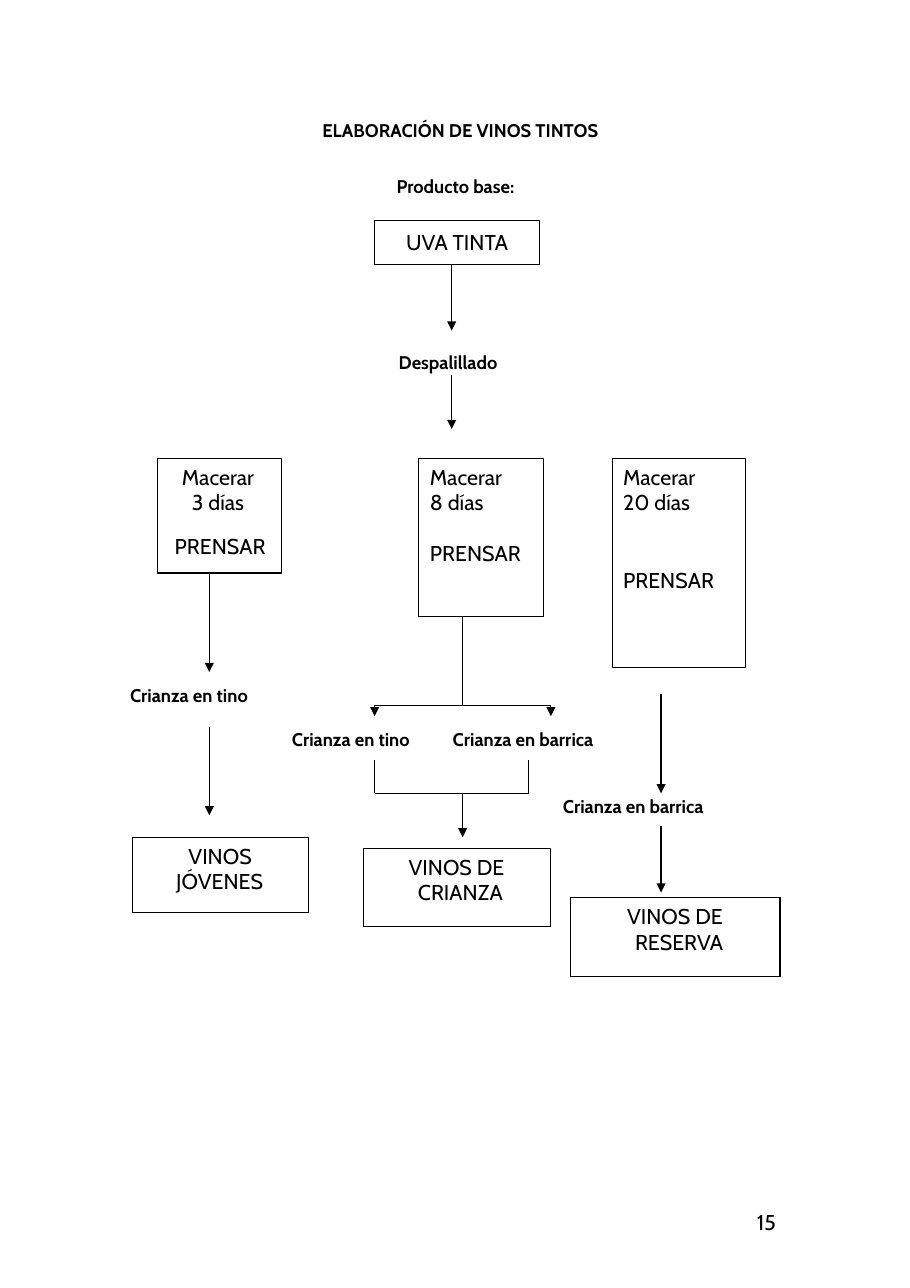
from dataclasses import dataclass

from lxml import etree
from pptx import Presentation
from pptx import util as u
from pptx.dml.color import RGBColor
from pptx.enum import shapes, text
from pptx.oxml.ns import qn


@dataclass(frozen=True)
class Theme:
    font: str = "Cabin"
    ink: RGBColor = RGBColor(0, 0, 0)
    label_size: float = 12
    box_size: float = 14
    line_width: float = 0.72
    box_inset: float = 3.6


@dataclass(frozen=True)
class Line:
    text: str
    left: float = 0
    first: float = 0
    before: float = 0
    centred: bool = False


@dataclass(frozen=True)
class Box:
    left: float
    top: float
    width: float
    height: float
    lines: tuple[Line, ...]


@dataclass(frozen=True)
class Label:
    left: float
    top: float
    text: str
    bold: bool = True


@dataclass(frozen=True)
class Link:
    start: tuple[float, float]
    end: tuple[float, float]
    arrow: bool = True


THEME = Theme()
LABEL_WIDTH, LABEL_HEIGHT = 116, 16
TITLE = "ELABORACIÓN DE VINOS TINTOS"

BOXES = (
    Box(244.8, 144, 108, 28.8, (Line("UVA TINTA", centred=True),)),
    Box(103, 299.5, 81, 75, (
        Line("Macerar\v3 días", 22.4, -6.5), Line("PRENSAR", 11.2, before=12))),
    Box(273.6, 299.5, 81.4, 103.7, (
        Line("Macerar\v8 días", 7.4), Line("PRENSAR", 7.4, before=16.4))),
    Box(400, 299.5, 87.1, 136.8, (
        Line("Macerar\v20 días", 7.2), Line("PRENSAR", 7.2, before=34))),
    Box(86.4, 547.2, 115.2, 49, (Line("VINOS\vJÓVENES", 28.8, 8),)),
    Box(237.6, 554.4, 122.4, 51.1, (Line("VINOS DE\vCRIANZA", 35.5, -6),)),
    Box(373, 586.8, 136.8, 51.1, (Line("VINOS DE\vRESERVA", 42, -5.2),)),
)

LABELS = (
    Label(259.2, 114.5, "Producto base:"),
    Label(260.6, 229.7, "Despalillado"),
    Label(85, 447.1, "Crianza en tino"),
    Label(190.8, 475.9, "Crianza en tino"),
    Label(295.9, 475.9, "Crianza en barrica"),
    Label(367.9, 519.8, "Crianza en barrica"),
    Label(494.6, 790.2, "15", bold=False),
)

LINKS = (
    Link((295.2, 172.8), (295.2, 216)),
    Link((295.2, 244.8), (295.2, 280.3)),
    Link((136.8, 374.5), (136.8, 439.2)),
    Link((136.8, 475.2), (136.8, 532.8)),
    Link((302.4, 403.2), (302.4, 460.8), arrow=False),
    Link((244.8, 460.8), (360, 460.8), arrow=False),
    Link((244.8, 460.8), (244.8, 468)),
    Link((360, 460.8), (360, 468)),
    Link((244.8, 496.8), (244.8, 518.4), arrow=False),
    Link((345.6, 496.8), (345.6, 518.4), arrow=False),
    Link((244.8, 518.4), (345.6, 518.4), arrow=False),
    Link((302.4, 518.4), (302.4, 547.2)),
    Link((432, 453.6), (432, 518.4)),
    Link((432, 540), (432, 583.2)),
)


def set_font(paragraph, size: float, bold: bool) -> None:
    font = paragraph.font
    font.name, font.size, font.bold = THEME.font, u.Pt(size), bold
    font.color.rgb = THEME.ink


def prepare_frame(frame, top_inset: float = 0) -> None:
    frame.auto_size = text.MSO_AUTO_SIZE.NONE
    frame.word_wrap = True
    frame.margin_left = frame.margin_right = frame.margin_bottom = 0
    frame.margin_top = u.Pt(top_inset)
    frame.vertical_anchor = text.MSO_ANCHOR.TOP


def add_title(slide) -> None:
    title = slide.shapes.title
    title.left, title.top = u.Pt(198.7), u.Pt(77.8)
    title.width, title.height = u.Pt(204.5), u.Pt(LABEL_HEIGHT)
    prepare_frame(title.text_frame)
    paragraph = title.text_frame.paragraphs[0]
    paragraph.text = TITLE
    paragraph.alignment = text.PP_ALIGN.CENTER
    set_font(paragraph, THEME.label_size, True)


def add_box(slide, box: Box) -> None:
    shape = slide.shapes.add_shape(
        shapes.MSO_SHAPE.RECTANGLE,
        u.Pt(box.left), u.Pt(box.top), u.Pt(box.width), u.Pt(box.height))
    shape.shadow.inherit = False
    shape.fill.background()
    shape.line.color.rgb = THEME.ink
    shape.line.width = u.Pt(THEME.line_width)
    frame = shape.text_frame
    prepare_frame(frame, THEME.box_inset)
    for index, line in enumerate(box.lines):
        paragraph = frame.add_paragraph() if index else frame.paragraphs[0]
        paragraph.text = line.text
        paragraph.space_before = u.Pt(line.before)
        paragraph.alignment = text.PP_ALIGN.LEFT
        if line.centred:
            paragraph.alignment = text.PP_ALIGN.CENTER
            frame.margin_top = 0
            frame.vertical_anchor = text.MSO_ANCHOR.MIDDLE
        properties = paragraph._p.get_or_add_pPr()
        properties.set("marL", str(u.Pt(line.left)))
        properties.set("indent", str(u.Pt(line.first)))
        set_font(paragraph, THEME.box_size, False)


def add_label(slide, label: Label) -> None:
    width = LABEL_WIDTH if label.bold else 24
    shape = slide.shapes.add_textbox(
        u.Pt(label.left), u.Pt(label.top), u.Pt(width), u.Pt(LABEL_HEIGHT))
    prepare_frame(shape.text_frame)
    paragraph = shape.text_frame.paragraphs[0]
    paragraph.text = label.text
    set_font(paragraph, THEME.label_size if label.bold else THEME.box_size, label.bold)


def add_link(slide, link: Link) -> None:
    connector = slide.shapes.add_connector(
        shapes.MSO_CONNECTOR.STRAIGHT,
        *(u.Pt(value) for value in link.start + link.end))
    connector.line.color.rgb = THEME.ink
    connector.line.width = u.Pt(THEME.line_width)
    properties = connector._element.spPr
    if link.arrow:
        etree.SubElement(properties.find(qn("a:ln")), qn("a:tailEnd"),
                         type="triangle", w="med", len="med")
    etree.SubElement(properties, qn("a:effectLst"))


def main() -> None:
    presentation = Presentation()
    presentation.slide_width, presentation.slide_height = u.Pt(594.72), u.Pt(841.68)
    slide = presentation.slides.add_slide(presentation.slide_layouts[5])
    add_title(slide)
    for box in BOXES:
        add_box(slide, box)
    for label in LABELS:
        add_label(slide, label)
    for link in LINKS:
        add_link(slide, link)
    presentation.save("out.pptx")


if __name__ == "__main__":
    main()
